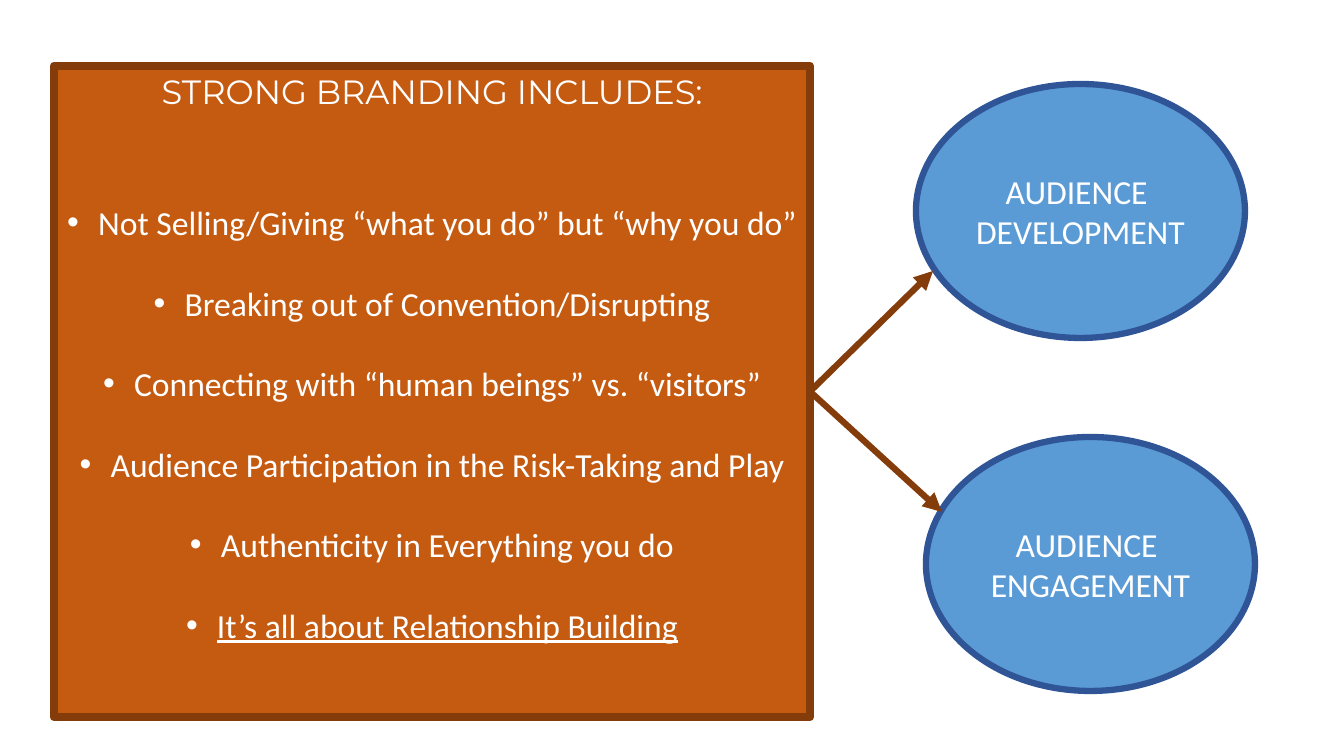
from lxml import etree
from pptx import Presentation
from pptx.dml.color import RGBColor
from pptx.enum.shapes import MSO_CONNECTOR, MSO_SHAPE
from pptx.enum.text import MSO_ANCHOR, PP_ALIGN
from pptx.oxml.ns import qn
from pptx.util import Emu, Pt

RECT, OVAL = MSO_SHAPE.RECTANGLE, MSO_SHAPE.OVAL
STRAIGHT = MSO_CONNECTOR.STRAIGHT
TOP, MIDDLE = MSO_ANCHOR.TOP, MSO_ANCHOR.MIDDLE
CENTER = PP_ALIGN.CENTER

PX_PER_INCH = 100.8
ORANGE, BROWN = "C55A11", "843C0B"
BLUE, NAVY = "5B9BD5", "2F5597"
WHITE = "FFFFFF"
RIGHT_SITE = 3

BULLETS = [
    "Not Selling/Giving “what you do” but “why you do”",
    "Breaking out of Convention/Disrupting",
    "Connecting with “human beings” vs. “visitors”",
    "Audience Participation in the Risk-Taking and Play",
    "Authenticity in Everything you do",
    "It’s all about Relationship Building",
]


def px(n):
    return Emu(round(n * 914400 / PX_PER_INCH))


def color(value):
    return RGBColor.from_string(value)


def add_box(slide, kind, box, fill, line, width, anchor):
    sp = slide.shapes.add_shape(kind, *map(px, box))
    sp.shadow.inherit = False
    sp.fill.solid()
    sp.fill.fore_color.rgb = color(fill)
    sp.line.color.rgb = color(line)
    sp.line.width = Pt(width)
    sp.text_frame.vertical_anchor = anchor
    return sp


def style(p, text, font="Calibri"):
    p.text = text
    p.alignment = CENTER
    p.font.size = Pt(24)
    p.font.name = font
    p.font.color.rgb = color(WHITE)


def set_bullet(p):
    pPr = p._p.get_or_add_pPr()
    pPr.set("marL", str(px(31)))
    pPr.set("indent", str(-px(31)))
    bu_font = etree.Element(qn("a:buFont"), typeface="Arial")
    bu_char = etree.Element(qn("a:buChar"), char="•")
    pPr.insert_element_before(bu_font, "a:defRPr")
    pPr.insert_element_before(bu_char, "a:defRPr")


def branding_panel(slide, box):
    sp = add_box(slide, RECT, box, ORANGE, BROWN, 6, TOP)
    tf = sp.text_frame
    tf.word_wrap = False
    style(tf.paragraphs[0], "STRONG BRANDING INCLUDES:", "Montserrat")
    for i, text in enumerate(BULLETS):
        p = tf.add_paragraph()
        style(p, text)
        p.space_before = Pt(28.7 if i else 65)
        set_bullet(p)
    p.runs[0].font.underline = True
    return sp


def audience_oval(slide, box, lines):
    sp = add_box(slide, OVAL, box, BLUE, NAVY, 4.5, MIDDLE)
    tf = sp.text_frame
    tf.word_wrap = True
    for i, text in enumerate(lines):
        p = tf.add_paragraph() if i else tf.paragraphs[0]
        style(p, text)


def arrow(slide, panel, end):
    cx = slide.shapes.add_connector(STRAIGHT, 0, 0, *map(px, end))
    cx.begin_connect(panel, RIGHT_SITE)
    cx.line.color.rgb = color(BROWN)
    cx.line.width = Pt(4.5)
    ln = cx.line._get_or_add_ln()
    etree.SubElement(ln, qn("a:tailEnd"), type="triangle")
    etree.SubElement(cx._element.spPr, qn("a:effectLst"))


def main():
    prs = Presentation()
    prs.slide_width, prs.slide_height = px(1344), px(756)
    slide = prs.slides.add_slide(prs.slide_layouts[6])
    panel = branding_panel(slide, (54, 66, 756, 651))
    ovals = [
        ((916, 84, 329, 254), "DEVELOPMENT", (17, 187)),
        ((926, 437, 329, 254), "ENGAGEMENT", (16, 75)),
    ]
    for box, goal, _ in ovals:
        audience_oval(slide, box, ("AUDIENCE ", goal))
    for (x, y, _, _), _, (dx, dy) in ovals:
        arrow(slide, panel, (x + dx, y + dy))
    prs.save("out.pptx")


if __name__ == "__main__":
    main()
